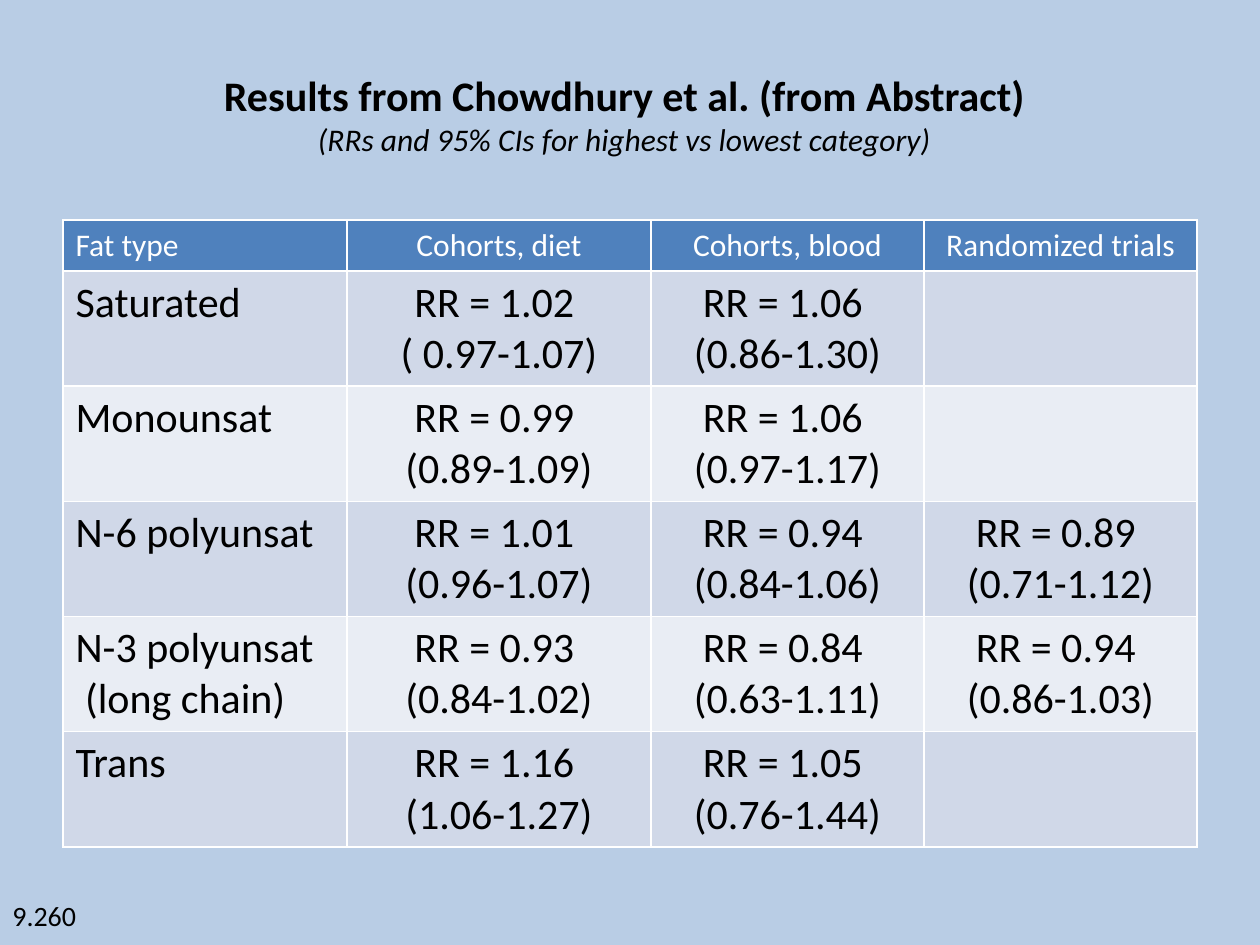
from dataclasses import dataclass
from typing import Any

from lxml import etree
from pptx import Presentation
from pptx.dml.color import RGBColor
from pptx.enum.text import PP_ALIGN
from pptx.oxml.ns import qn
from pptx.util import Emu, Pt

LEFT = PP_ALIGN.LEFT
CENTER = PP_ALIGN.CENTER
EMU_PER_PX = 914400 / 126
FONT_NAME = "Calibri"
COLORS = {
    "background": "B9CDE5",
    "header": "4F81BD",
    "odd_row": "D0D8E8",
    "even_row": "E9EDF4",
    "border": "FFFFFF",
    "header_text": "FFFFFF",
    "text": "000000",
}
TABLE_LEFT, TABLE_TOP = 63, 220
COLUMN_WIDTHS = (284, 304, 273, 273)
HEADER_HEIGHT, BODY_HEIGHT = 51, 115
HEADINGS = ("Fat type", "Cohorts, diet", "Cohorts, blood", "Randomized trials")


@dataclass(frozen=True)
class Line:
    text: str
    size: int
    color: str = "text"
    bold: bool = False
    italic: bool = False


@dataclass(frozen=True)
class TextBox:
    left: int
    top: int
    width: int
    height: int
    alignment: Any
    lines: tuple[Line, ...]


@dataclass(frozen=True)
class Estimate:
    ratio: str
    interval: str


@dataclass(frozen=True)
class FatType:
    name: tuple[str, ...]
    estimates: tuple[Estimate, ...]


TEXT_BOXES = (
    TextBox(84, 63, 1081, 102, CENTER, (
        Line("Results from Chowdhury et al. (from Abstract)", 24, bold=True),
        Line("(RRs and 95% CIs for highest vs lowest category)", 18, italic=True),
    )),
    TextBox(0, 892, 357, 47, LEFT, (Line("9.260", 16),)),
)
FAT_TYPES = (
    FatType(("Saturated",), (
        Estimate("1.02", " 0.97-1.07"), Estimate("1.06", "0.86-1.30"))),
    FatType(("Monounsat",), (
        Estimate("0.99", "0.89-1.09"), Estimate("1.06", "0.97-1.17"))),
    FatType(("N-6 polyunsat",), (
        Estimate("1.01", "0.96-1.07"), Estimate("0.94", "0.84-1.06"),
        Estimate("0.89", "0.71-1.12"))),
    FatType(("N-3 polyunsat", " (long chain)"), (
        Estimate("0.93", "0.84-1.02"), Estimate("0.84", "0.63-1.11"),
        Estimate("0.94", "0.86-1.03"))),
    FatType(("Trans",), (
        Estimate("1.16", "1.06-1.27"), Estimate("1.05", "0.76-1.44"))),
)


def px(length: int) -> Emu:
    """Convert whole pixels to EMU."""
    return Emu(round(length * EMU_PER_PX))


def rgb(name: str) -> RGBColor:
    """Look up a named colour."""
    return RGBColor.from_string(COLORS[name])


def write_lines(text_frame: Any, lines: tuple[Line, ...], alignment: Any) -> None:
    """Write one formatted paragraph per line."""
    for index, line in enumerate(lines):
        paragraph = text_frame.add_paragraph() if index else text_frame.paragraphs[0]
        paragraph.alignment = alignment
        run = paragraph.add_run()
        run.text = line.text
        values = {"name": FONT_NAME, "size": Pt(line.size),
                  "bold": line.bold, "italic": line.italic}
        for attribute, value in values.items():
            setattr(run.font, attribute, value)
        run.font.color.rgb = rgb(line.color)


def draw_text_box(slide: Any, box: TextBox) -> None:
    """Add a wrapped text box."""
    shape = slide.shapes.add_textbox(
        px(box.left), px(box.top), px(box.width), px(box.height))
    shape.text_frame.word_wrap = True
    write_lines(shape.text_frame, box.lines, box.alignment)


def fill_cell(cell: Any, lines: tuple[Line, ...], alignment: Any, fill: str) -> None:
    """Give a cell its borders, fill and text."""
    properties = cell._tc.get_or_add_tcPr()
    for side in ("lnL", "lnR", "lnT", "lnB"):
        border = etree.SubElement(properties, qn(f"a:{side}"), w=str(Pt(1)))
        solid = etree.SubElement(border, qn("a:solidFill"))
        etree.SubElement(solid, qn("a:srgbClr"), val=COLORS["border"])
    cell.fill.solid()
    cell.fill.fore_color.rgb = rgb(fill)
    write_lines(cell.text_frame, lines, alignment)


def estimate_lines(estimate: Estimate) -> tuple[Line, ...]:
    """Format a relative risk above its confidence interval."""
    return (Line(f"RR = {estimate.ratio} ", 24), Line(f"({estimate.interval})", 24))


def draw_results_table(slide: Any) -> None:
    """Add the table of relative risks by fat type."""
    heights = (HEADER_HEIGHT,) + (BODY_HEIGHT,) * len(FAT_TYPES)
    table = slide.shapes.add_table(
        len(heights), len(COLUMN_WIDTHS), px(TABLE_LEFT), px(TABLE_TOP),
        px(sum(COLUMN_WIDTHS)), px(sum(heights))).table
    for column, width in zip(table.columns, COLUMN_WIDTHS):
        column.width = px(width)
    for row, height in zip(table.rows, heights):
        row.height = px(height)
    contents = [[(Line(heading, 18, "header_text"),) for heading in HEADINGS]]
    for fat_type in FAT_TYPES:
        names = tuple(Line(name, 24) for name in fat_type.name)
        contents.append([names, *map(estimate_lines, fat_type.estimates)])
    for row_index, row_contents in enumerate(contents):
        band = "odd_row" if row_index % 2 else "even_row"
        fill = band if row_index else "header"
        for column_index in range(len(COLUMN_WIDTHS)):
            has_text = column_index < len(row_contents)
            lines = row_contents[column_index] if has_text else ()
            alignment = CENTER if column_index else LEFT
            fill_cell(table.cell(row_index, column_index), lines, alignment, fill)


def main() -> None:
    """Build and save the slide."""
    presentation = Presentation()
    presentation.slide_width = px(1260)
    presentation.slide_height = px(945)
    slide = presentation.slides.add_slide(presentation.slide_layouts[6])
    slide.background.fill.solid()
    slide.background.fill.fore_color.rgb = rgb("background")
    draw_results_table(slide)
    for box in TEXT_BOXES:
        draw_text_box(slide, box)
    presentation.save("out.pptx")


if __name__ == "__main__":
    main()
